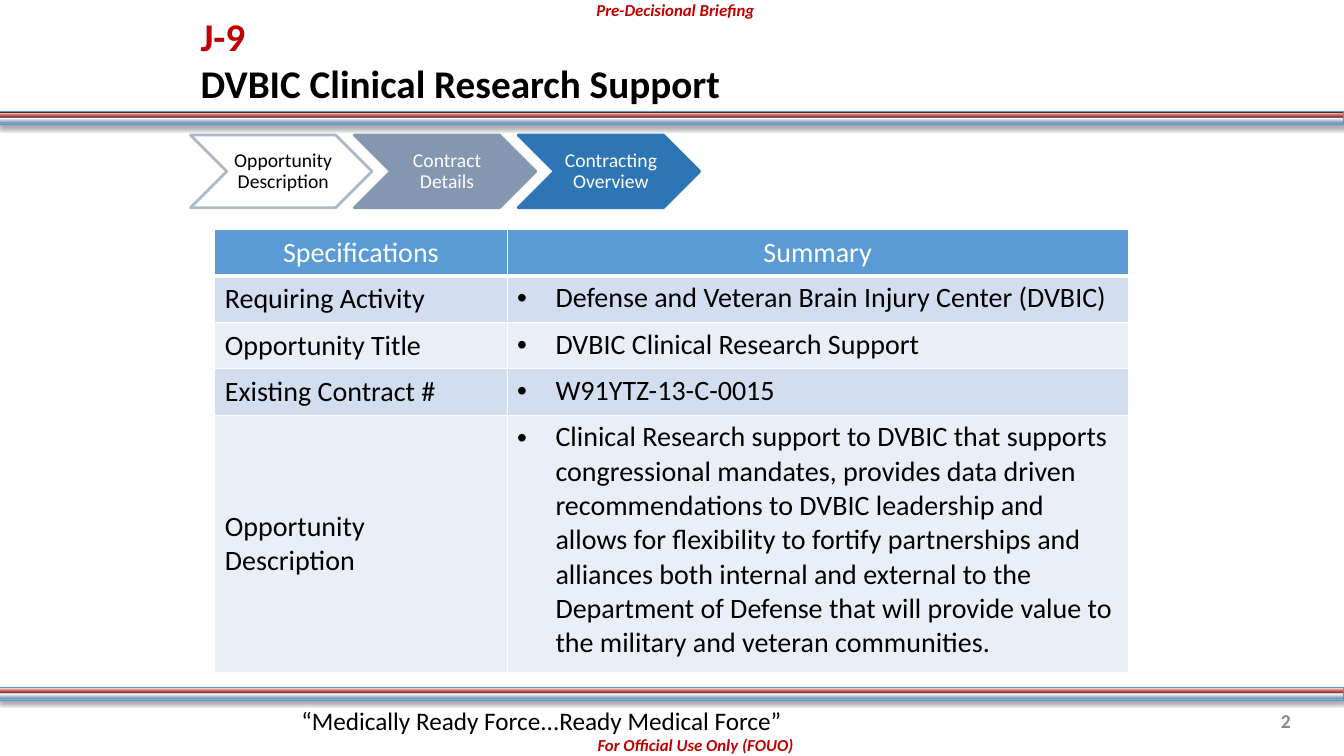
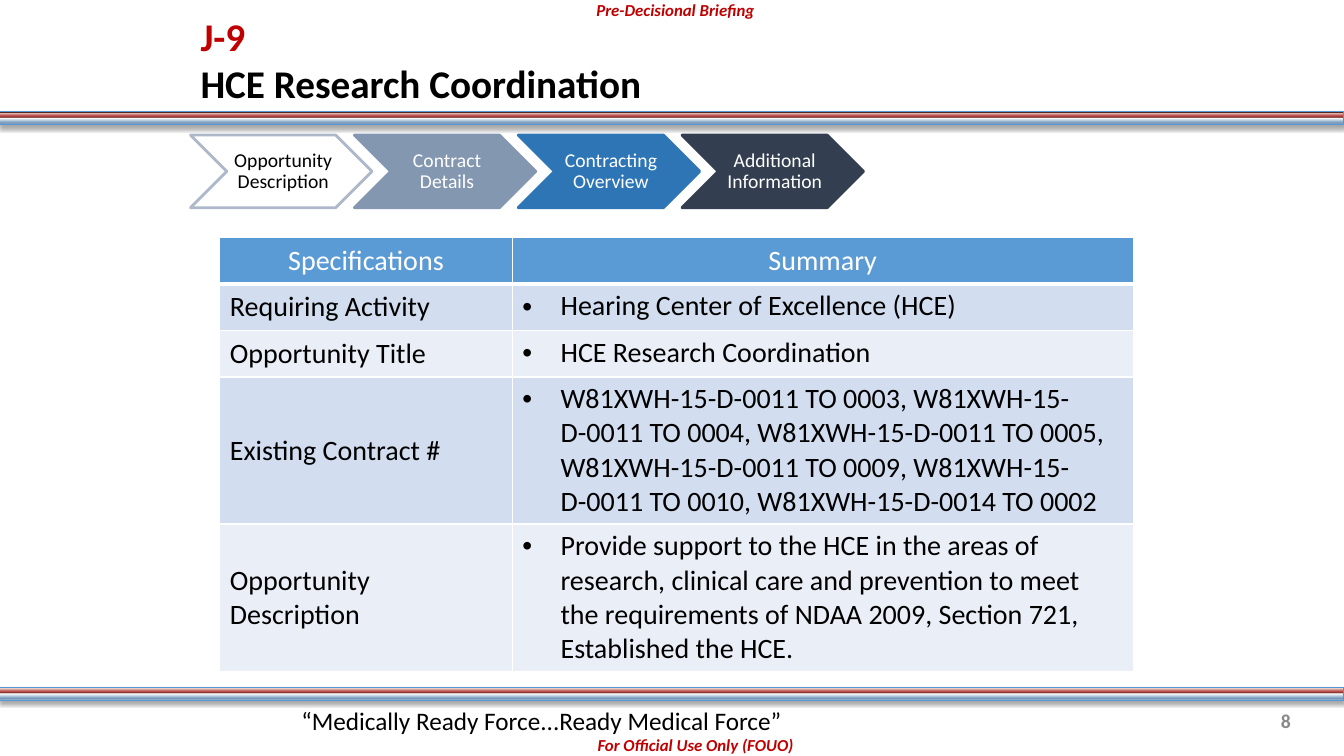
from lxml import etree
from pptx import Presentation
from pptx.dml.color import RGBColor
from pptx.enum.shapes import MSO_SHAPE
from pptx.enum.text import MSO_ANCHOR, PP_ALIGN
from pptx.oxml.ns import qn
from pptx.util import Inches, Pt

LEFT, CENTER, RIGHT = PP_ALIGN.LEFT, PP_ALIGN.CENTER, PP_ALIGN.RIGHT
TOP, MIDDLE = MSO_ANCHOR.TOP, MSO_ANCHOR.MIDDLE
RECT, CHEVRON = MSO_SHAPE.RECTANGLE, MSO_SHAPE.CHEVRON

FONT = "Calibri"
W, H = 13.33, 7.5
COLORS = {
    "black": "000000", "white": "FFFFFF", "red": "C00000", "gray": "898989",
    "band_line": "5698D3", "step_line": "ADB9CA", "steel": "8497B0",
    "blue": "2E75B6", "navy": "333F50",
    "header": "5B9BD5", "odd_row": "D2DEEF", "even_row": "EAEFF7",
}
BAND_STOPS = [(0, "DCEBF5"), (8, "83A7C3"), (13, "768FB9"), (21, "83A7C3"),
              (52, "FFFFFF"), (56, "9C6563"), (58, "80302D"), (71, "C0524E"),
              (94, "EBDAD4"), (100, "55261C")]

# Text formats
TITLE = {"size": Pt(28), "bold": True}
MARKING = {"size": Pt(12), "bold": True, "italic": True}
MOTTO = {"size": Pt(18)}
PAGE = {"size": Pt(14), "bold": True}
STEP = {"size": Pt(14)}
CELL = {"size": Pt(20)}

# Chevron steps: label, fill, line, text colour
STEPS = [
    ("Opportunity Description", "white", "step_line", "black"),
    ("Contract Details", "steel", "steel", "white"),
    ("Contracting Overview", "blue", "blue", "white"),
    ("Additional Information", "navy", "navy", "white"),
]
SPEC_NAMES = ["Requiring Activity", "Opportunity Title", "Existing Contract #",
              "Opportunity Description"]

SLIDES = [
    {
        "title": "DVBIC Clinical Research Support", "page": "2", "steps": 3,
        "table_at": (2.13, 2.28), "rows": [0.46, 0.46, 0.46, 0.46, 2.55],
        "summary": [
            "Defense and Veteran Brain Injury Center (DVBIC)",
            "DVBIC Clinical Research Support",
            "W91YTZ-13-C-0015",
            "Clinical Research support to DVBIC that supports congressional "
            "mandates, provides data driven recommendations to DVBIC leadership "
            "and allows for flexibility to fortify partnerships and alliances "
            "both internal and external to the Department of Defense that will "
            "provide value to the military and veteran communities.",
        ],
    },
    {
        "title": "HCE Research Coordination", "page": "8", "steps": 4,
        "table_at": (2.18, 2.36), "rows": [0.46, 0.46, 0.46, 1.46, 1.46],
        "summary": [
            "Hearing Center of Excellence (HCE)",
            "HCE Research Coordination",
            "W81XWH-15-D-0011 TO 0003, W81XWH-15-D-0011 TO 0004, "
            "W81XWH-15-D-0011 TO 0005, W81XWH-15-D-0011 TO 0009, "
            "W81XWH-15-D-0011 TO 0010, W81XWH-15-D-0014 TO 0002",
            "Provide support to the HCE in the areas of research, clinical care "
            "and prevention to meet the requirements of NDAA 2009, Section 721, "
            "Established the HCE.",
        ],
    },
]


def rgb(name):
    return RGBColor.from_string(COLORS[name])


def sub(parent, tag, **attrs):
    return etree.SubElement(parent, qn(tag), {k: str(v) for k, v in attrs.items()})


def add_run(p, text, fmt, color):
    r = p.add_run()
    r.text = text
    r.font.name = FONT
    r.font.color.rgb = rgb(color)
    for key, value in fmt.items():
        setattr(r.font, key, value)


def set_insets(tf, left, top, right, bottom):
    sides = {"left": left, "top": top, "right": right, "bottom": bottom}
    for side, value in sides.items():
        setattr(tf, f"margin_{side}", Inches(value))


def add_text(s, box, text, fmt, color, align=LEFT, anchor=TOP):
    tf = s.shapes.add_textbox(*map(Inches, box)).text_frame
    tf.word_wrap = True
    tf.vertical_anchor = anchor
    p = tf.paragraphs[0]
    p.alignment = align
    add_run(p, text, fmt, color)
    return tf


def add_band(s, box):
    sp = s.shapes.add_shape(RECT, *map(Inches, box))
    sp.fill.gradient()
    sp.fill.gradient_angle = 90
    sp.line.color.rgb = rgb("band_line")
    sp.line.width = Pt(0.75)
    stops = sp._element.spPr.find(".//" + qn("a:gsLst"))
    for old in list(stops):
        stops.remove(old)
    for pos, color in BAND_STOPS:
        sub(sub(stops, "a:gs", pos=pos * 1000), "a:srgbClr", val=color)
    # Soft shadow below the band
    sp.shadow.inherit = False
    effects = sp._element.spPr.find(qn("a:effectLst"))
    shadow = sub(effects, "a:outerShdw", blurRad=Pt(3.1), dist=Pt(1.8),
                 dir=5400000, rotWithShape=0)
    sub(sub(shadow, "a:srgbClr", val=COLORS["black"]), "a:alpha", val=35000)


def add_frame(s, title, page):
    # Bands and markings
    for top in (1.11, 6.82):
        add_band(s, (0, top, W, 0.13))
    for box, text in (((2.82, 7.24, 8.16, 0.3), "For Official Use Only (FOUO)"),
                      ((5.4, -0.05, 2.6, 0.3), "Pre-Decisional Briefing")):
        add_text(s, box, text, MARKING, "red", CENTER)
    # Title
    tf = add_text(s, (1.89, 0.14, 7.42, 0.9), "J-9", TITLE, "red", anchor=MIDDLE)
    set_insets(tf, 0.1, 0, 0.1, 0)
    p = tf.paragraphs[0]
    p.add_line_break()
    add_run(p, title, TITLE, "black")
    # Motto and page number
    add_text(s, (2.89, 6.95, 7.67, 0.4),
             "“Medically Ready Force...Ready Medical Force”", MOTTO, "black")
    add_text(s, (12.01, 6.95, 0.89, 0.4), page, PAGE, "gray", RIGHT, MIDDLE)


def add_steps(s, steps, left, top, width=1.8, height=0.72):
    pitch = 0.9 * width + 0.005
    for i, (label, fill, line, color) in enumerate(steps):
        sp = s.shapes.add_shape(CHEVRON, Inches(left + i * pitch), Inches(top),
                                Inches(width), Inches(height))
        sp.shadow.inherit = False
        sp.fill.solid()
        sp.fill.fore_color.rgb = rgb(fill)
        sp.line.color.rgb = rgb(line)
        sp.line.width = Pt(2)
        sub(sp._element.spPr.find(qn("a:ln")), "a:round")
        tf = sp.text_frame
        tf.word_wrap = True
        tf.vertical_anchor = MIDDLE
        set_insets(tf, 0.06, 0.02, 0.02, 0.02)
        p = tf.paragraphs[0]
        p.alignment = CENTER
        p.line_spacing = 0.9
        add_run(p, label, STEP, color)


def fill_cell(cell, text, fill, color, bottom=1, align=LEFT, bullet=False):
    # Borders come before the fill in the cell properties
    tcPr = cell._tc.get_or_add_tcPr()
    for side, width in (("L", 1), ("R", 1), ("T", 1), ("B", bottom)):
        ln = sub(tcPr, f"a:ln{side}", w=Pt(width))
        sub(sub(ln, "a:solidFill"), "a:srgbClr", val=COLORS["white"])
    cell.fill.solid()
    cell.fill.fore_color.rgb = rgb(fill)
    cell.vertical_anchor = TOP if bullet else MIDDLE
    set_insets(cell, 0.1, 0.05, 0.1, 0.05)
    p = cell.text_frame.paragraphs[0]
    p.alignment = align
    if bullet:
        pPr = p._p.get_or_add_pPr()
        pPr.set("marL", str(Inches(0.38)))
        pPr.set("indent", str(-Inches(0.38)))
        sub(pPr, "a:buFont", typeface="Arial")
        sub(pPr, "a:buChar", char="•")
    add_run(p, text, CELL, color)


def add_specs(s, left, top, heights, summary, widths=(2.9, 6.16)):
    table = s.shapes.add_table(len(heights), len(widths), Inches(left), Inches(top),
                               Inches(sum(widths)), Inches(sum(heights))).table
    for col, width in zip(table.columns, widths):
        col.width = Inches(width)
    for row, height in zip(table.rows, heights):
        row.height = Inches(height)
    # Header row
    for c, text in enumerate(("Specifications", "Summary")):
        fill_cell(table.cell(0, c), text, "header", "white", bottom=3, align=CENTER)
    # Body rows
    for r, (name, detail) in enumerate(zip(SPEC_NAMES, summary), 1):
        fill = "odd_row" if r % 2 else "even_row"
        fill_cell(table.cell(r, 0), name, fill, "black")
        fill_cell(table.cell(r, 1), detail, fill, "black", bullet=True)


def main():
    prs = Presentation()
    prs.slide_width, prs.slide_height = Inches(W), Inches(H)
    for item in SLIDES:
        s = prs.slides.add_slide(prs.slide_layouts[6])
        add_frame(s, item["title"], item["page"])
        add_steps(s, STEPS[:item["steps"]], 1.89, 1.34)
        add_specs(s, *item["table_at"], item["rows"], item["summary"])
    prs.save("out.pptx")


if __name__ == "__main__":
    main()
